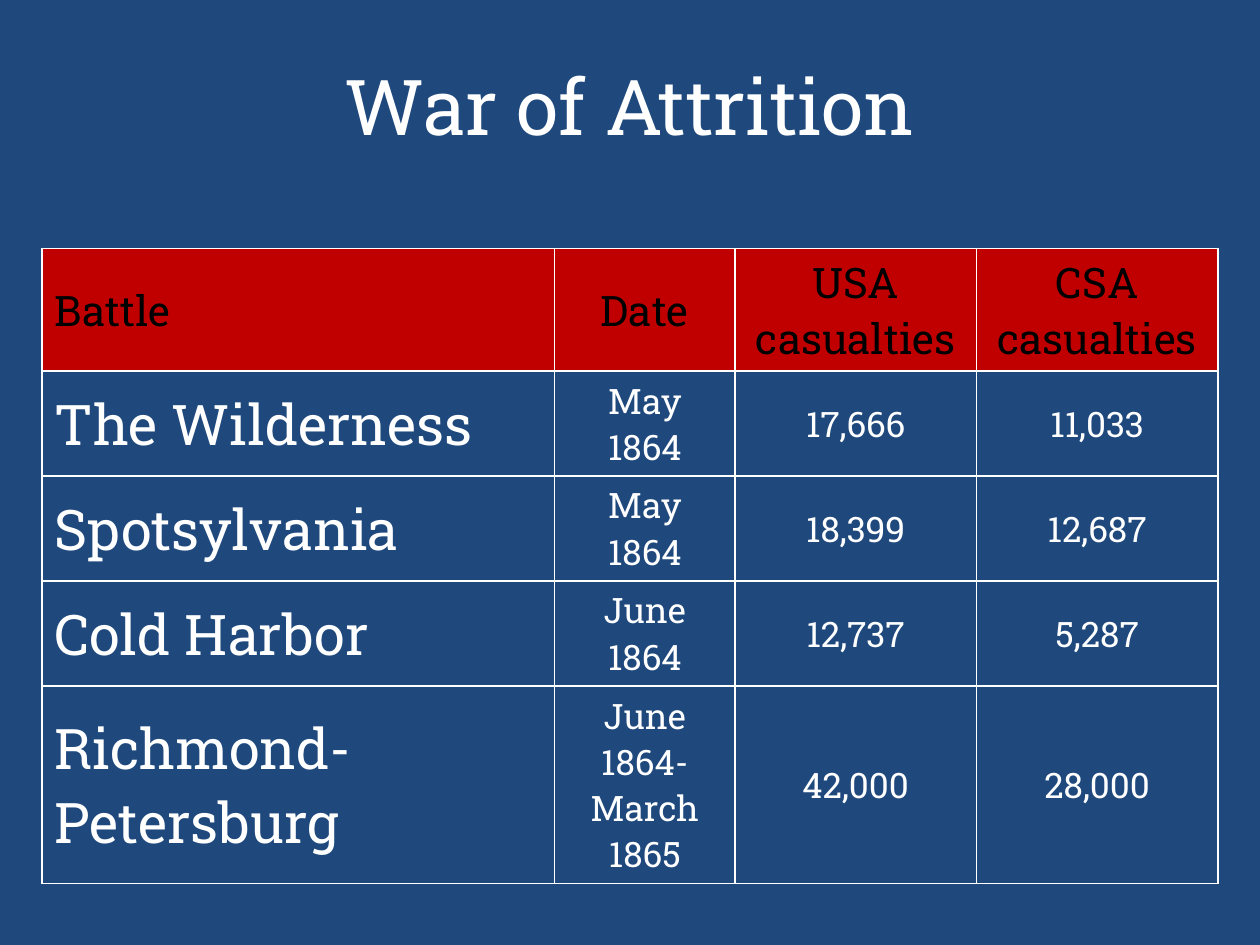
from lxml import etree
from pptx import Presentation
from pptx.dml.color import RGBColor
from pptx.enum import text
from pptx.oxml import ns
from pptx.util import Pt

NAVY = RGBColor(0x1F, 0x49, 0x7D)
RED = RGBColor(0xC0, 0x00, 0x00)
WHITE = RGBColor(0xFF, 0xFF, 0xFF)
BLACK = RGBColor(0x00, 0x00, 0x00)
FONT = "Roboto Slab"

TITLE = {"size": Pt(44), "color": WHITE}
HEADER = {"size": Pt(24), "color": BLACK}
BATTLE = {"size": Pt(32), "color": WHITE}
FIGURE = {"size": Pt(20), "color": WHITE}

COLUMNS = (293, 103, 138, 138)
HEIGHTS = (70, 60, 60, 60, 113)
ROWS = (
    ("Battle", "Date", "USA\ncasualties", "CSA casualties"),
    ("The Wilderness", "May\n1864", "17,666", "11,033"),
    ("Spotsylvania", "May\n1864", "18,399", "12,687"),
    ("Cold Harbor", "June\n1864", "12,737", "5,287"),
    ("Richmond-Petersburg", "June 1864-March 1865", "42,000", "28,000"),
)


def write(tf, words, style, align):
    """Fill a text frame with one paragraph for each line of words."""
    tf.word_wrap = True
    tf.text = words
    for p in tf.paragraphs:
        p.alignment = align
        for r in p.runs:
            r.font.color.rgb = style["color"]
            for name, value in {"name": FONT, "size": style["size"], "bold": False}.items():
                setattr(r.font, name, value)


def add_borders(cell):
    """Draw a thin white line on every side of a cell."""
    props = cell._tc.get_or_add_tcPr()
    for i, side in enumerate(("lnL", "lnR", "lnT", "lnB")):
        line = etree.Element(ns.qn(f"a:{side}"), w=str(Pt(1)))
        fill = etree.SubElement(line, ns.qn("a:solidFill"))
        etree.SubElement(fill, ns.qn("a:srgbClr"), val=str(WHITE))
        props.insert(i, line)


def add_title(slide, left, top, width, height):
    """Place the centred title in its box."""
    sp = slide.shapes.add_textbox(Pt(left), Pt(top), Pt(width), Pt(height))
    write(sp.text_frame, "War of Attrition", TITLE, text.PP_ALIGN.CENTER)
    sp.text_frame.vertical_anchor = text.MSO_ANCHOR.MIDDLE


def add_casualties(slide, left, top, width, height):
    """Place the table of battles and casualties in its box."""
    table = slide.shapes.add_table(
        len(ROWS), len(COLUMNS), Pt(left), Pt(top), Pt(width), Pt(height)
    ).table
    table.first_row = table.horz_banding = False
    for column, size in zip(table.columns, COLUMNS):
        column.width = Pt(size)
    for row, size in zip(table.rows, HEIGHTS):
        row.height = Pt(size)
    for i, values in enumerate(ROWS):
        for j, words in enumerate(values):
            cell = table.cell(i, j)
            style = HEADER if i == 0 else BATTLE if j == 0 else FIGURE
            align = text.PP_ALIGN.LEFT if j == 0 else text.PP_ALIGN.CENTER
            write(cell.text_frame, words, style, align)
            cell.vertical_anchor = text.MSO_ANCHOR.MIDDLE
            if i == 0:
                cell.fill.solid()
                cell.fill.fore_color.rgb = RED
            else:
                cell.fill.background()
            add_borders(cell)


def main():
    """Build the slide and save it."""
    prs = Presentation()
    prs.slide_width, prs.slide_height = Pt(720), Pt(540)
    slide = prs.slides.add_slide(prs.slide_layouts[6])
    slide.background.fill.solid()
    slide.background.fill.fore_color.rgb = NAVY
    add_title(slide, 0, 24, 720, 72)
    add_casualties(slide, 24, 142, sum(COLUMNS), sum(HEIGHTS))
    prs.save("out.pptx")


if __name__ == "__main__":
    main()
